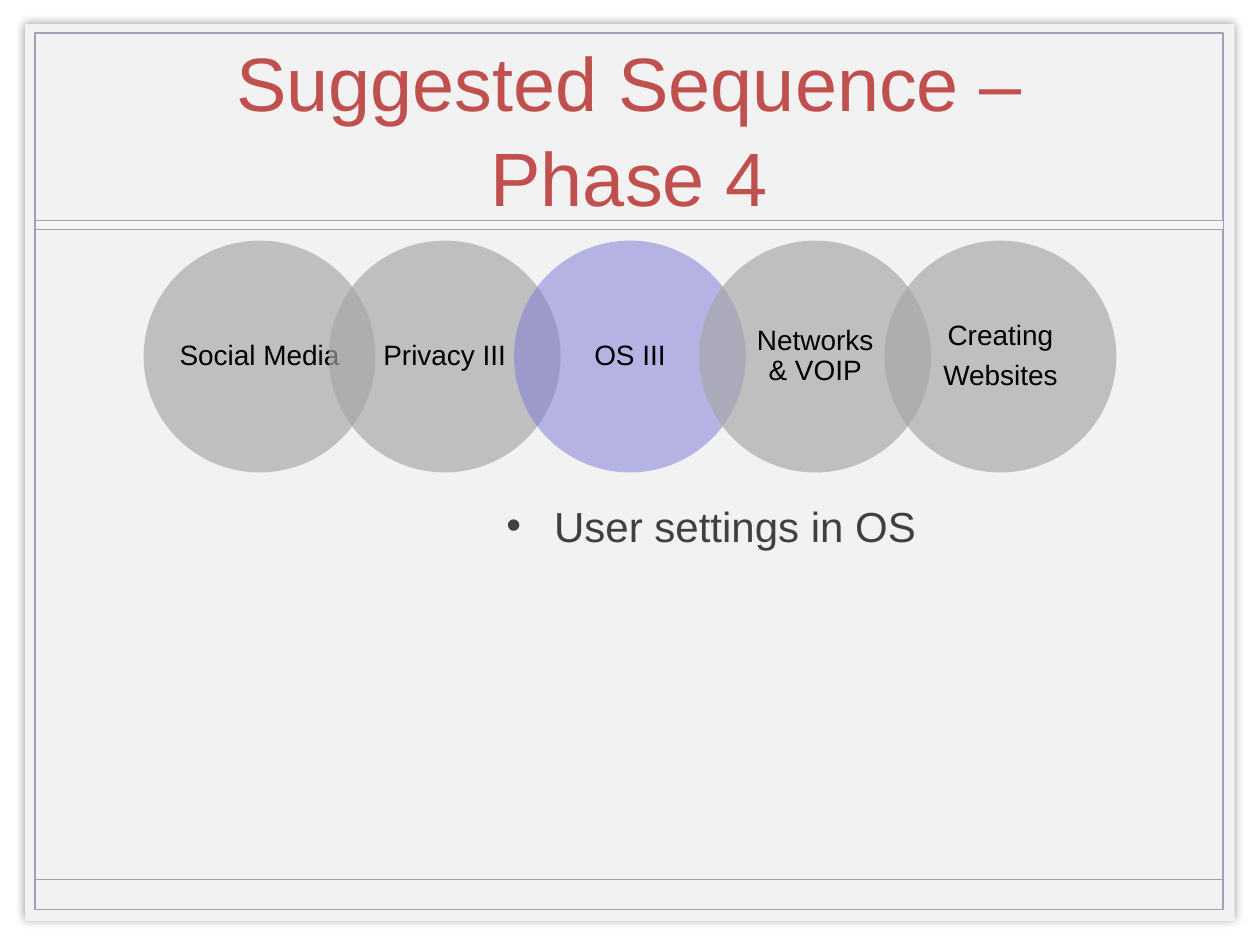
from dataclasses import dataclass

from lxml import etree
from pptx import Presentation
from pptx.dml.color import RGBColor
from pptx.enum.shapes import MSO_CONNECTOR, MSO_SHAPE
from pptx.enum.text import MSO_ANCHOR, PP_ALIGN
from pptx.oxml.ns import qn
from pptx.util import Inches, Pt

RECT, OVAL = MSO_SHAPE.RECTANGLE, MSO_SHAPE.OVAL
STRAIGHT = MSO_CONNECTOR.STRAIGHT
LEFT, CENTER = PP_ALIGN.LEFT, PP_ALIGN.CENTER
TOP, MIDDLE = MSO_ANCHOR.TOP, MSO_ANCHOR.MIDDLE


@dataclass(frozen=True)
class Theme:
    font: str = "Arial"
    paper: str = "F2F2F2"
    band: str = "F7F5F4"
    rule: str = "9EA2B6"
    title: str = "C0504D"
    body: str = "404040"
    label: str = "000000"
    muted: str = "A6A6A6"
    active: str = "7976D6"
    title_size: float = 43.2
    body_size: float = 24
    label_size: float = 16


THEME = Theme()

# Label lines, side inset of the label, whether this step is the current one
STEPS = [
    (["Social Media"], 0, False),
    (["Privacy III"], 0, False),
    (["OS III"], 0, True),
    (["Networks & VOIP"], 0.1, False),
    (["Creating", "Websites"], 0.1, False),
]


def rgb(code):
    return RGBColor.from_string(code)


def add_node(parent, tag, **attrs):
    node = etree.SubElement(parent, qn(tag))
    for key, value in attrs.items():
        node.set(key, str(value))
    return node


def add_shape(slide, kind, box, fill=None, line=None, width=1, alpha=None):
    shape = slide.shapes.add_shape(kind, *map(Inches, box))
    shape.shadow.inherit = False
    if fill:
        shape.fill.solid()
        shape.fill.fore_color.rgb = rgb(fill)
        if alpha is not None:
            color = shape.fill._xPr.find(".//" + qn("a:srgbClr"))
            add_node(color, "a:alpha", val=alpha * 1000)
    else:
        shape.fill.background()
    if line:
        shape.line.color.rgb = rgb(line)
        shape.line.width = Pt(width)
    else:
        shape.line.fill.background()
    return shape


def add_glow(shape, blur, alpha):
    """Put an even black shadow around the shape."""
    effects = shape._element.spPr.find(qn("a:effectLst"))
    shadow = add_node(effects, "a:outerShdw", blurRad=Pt(blur), dist=0, dir=0,
                      algn="ctr", rotWithShape=0)
    color = add_node(shadow, "a:srgbClr", val="000000")
    add_node(color, "a:alpha", val=alpha * 1000)


def add_line(slide, start, end, color, width):
    line = slide.shapes.add_connector(STRAIGHT, *map(Inches, start + end))
    line.line.color.rgb = rgb(color)
    line.line.width = Pt(width)
    add_node(line._element.spPr, "a:effectLst")


def add_bullet(para, indent, color):
    props = para._p.get_or_add_pPr()
    props.set("marL", str(Inches(indent)))
    props.set("indent", str(-Inches(indent)))
    add_node(add_node(props, "a:buClr"), "a:srgbClr", val=color)
    add_node(props, "a:buFont", typeface=THEME.font)
    add_node(props, "a:buChar", char="•")


def add_text(slide, box, lines, size, color, align=LEFT, anchor=TOP,
             inset=(0.1, 0.05), spacing=1.0, after=0, bullet=None):
    frame = slide.shapes.add_textbox(*map(Inches, box)).text_frame
    frame.word_wrap = True
    frame.vertical_anchor = anchor
    frame.margin_left = frame.margin_right = Inches(inset[0])
    frame.margin_top = frame.margin_bottom = Inches(inset[1])
    for i, words in enumerate(lines):
        para = frame.paragraphs[0] if i == 0 else frame.add_paragraph()
        para.alignment = align
        para.line_spacing = spacing
        para.space_after = Pt(after)
        if bullet:
            add_bullet(para, bullet, color)
        run = para.add_run()
        run.text = words
        run.font.name = THEME.font
        run.font.size = Pt(size)
        run.font.color.rgb = rgb(color)


def add_frame(slide):
    left, width = 0.28, 9.43
    page = add_shape(slide, RECT, (0.2, 0.19, 9.6, 7.12), fill=THEME.paper)
    add_glow(page, blur=5, alpha=40)
    add_shape(slide, RECT, (left, 0.26, width, 6.96), line=THEME.rule)
    add_line(slide, (left, 6.98), (left + width, 6.98), THEME.rule, 1)
    add_shape(slide, RECT, (left, 1.75, width, 0.07), fill=THEME.band,
              line=THEME.rule, width=0.25)


def add_steps(slide):
    """Draw the row of overlapping circles with their labels."""
    left, top, size, step, pad = 1.14, 1.91, 1.84, 1.47, 0.27
    inner = size - 2 * pad
    for i, (lines, side, active) in enumerate(STEPS):
        x = left + i * step
        fill, alpha = (THEME.active, 50) if active else (THEME.muted, 66)
        add_shape(slide, OVAL, (x, top, size, size), fill=fill, alpha=alpha)
        add_text(slide, (x + pad, top + pad, inner, inner), lines,
                 THEME.label_size, THEME.label, align=CENTER, anchor=MIDDLE,
                 inset=(side, 0.02), spacing=0.9, after=5.6)


def main():
    deck = Presentation()
    deck.slide_width, deck.slide_height = Inches(10), Inches(7.5)
    slide = deck.slides.add_slide(deck.slide_layouts[6])
    add_frame(slide)
    add_text(slide, (0.98, 0.27, 8.03, 1.47), ["Suggested Sequence – Phase 4"],
             THEME.title_size, THEME.title, align=CENTER, anchor=MIDDLE,
             spacing=1.05)
    add_steps(slide)
    add_text(slide, (3.92, 3.92, 4.83, 2.25), ["User settings in OS"],
             THEME.body_size, THEME.body, bullet=0.38)
    deck.save("out.pptx")


if __name__ == "__main__":
    main()
